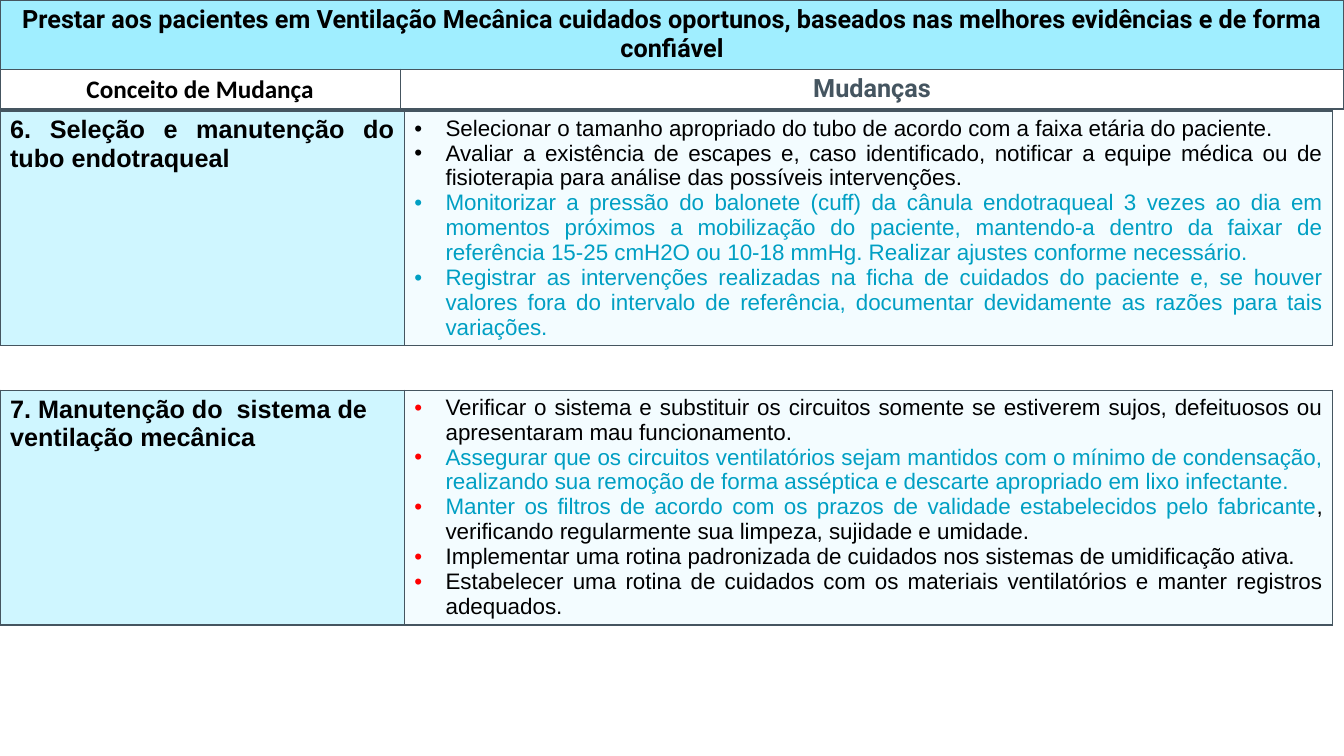
"""Build the slide of change concepts for patients on mechanical ventilation."""
from lxml import etree
from pptx import Presentation
from pptx.dml.color import RGBColor
from pptx.enum.text import MSO_ANCHOR, PP_ALIGN
from pptx.oxml.ns import qn
from pptx.util import Inches, Pt

CENTER, JUSTIFY, LEFT = PP_ALIGN.CENTER, PP_ALIGN.JUSTIFY, PP_ALIGN.LEFT
MIDDLE, TOP = MSO_ANCHOR.MIDDLE, MSO_ANCHOR.TOP
BLACK, SLATE, TEAL, RED = "000000", "455560", "009FC3", "FF0000"
WHITE, TITLE_FILL, CONCEPT_FILL, CHANGE_FILL = "FFFFFF", "A0EEFF", "CFF6FF", "F3FCFF"
LINE_CHARACTERS = 90
INDENT = Inches(0.31)

deck = Presentation()
deck.slide_width, deck.slide_height = Inches(13.33), Inches(7.5)
page = deck.slides.add_slide(deck.slide_layouts[6])


def add_grid(top, columns, rows):
    """Add a plain table; top, columns and rows are percentages of the slide."""
    widths = [round(deck.slide_width * share / 100) for share in columns]
    heights = [round(deck.slide_height * share / 100) for share in rows]
    table = page.shapes.add_table(len(rows), len(columns), 0, round(deck.slide_height * top / 100),
                                  sum(widths), sum(heights)).table
    table.first_row = table.horz_banding = False
    for column, width in zip(table.columns, widths):
        column.width = width
    for row, height in zip(table.rows, heights):
        row.height = height
    for cell in table.iter_cells():
        properties = cell._tc.get_or_add_tcPr()
        for side in ("a:lnL", "a:lnR", "a:lnT", "a:lnB"):
            border = etree.SubElement(properties, qn(side), w=str(Pt(1)))
            fill = etree.SubElement(border, qn("a:solidFill"))
            etree.SubElement(fill, qn("a:srgbClr"), val=SLATE)
    return table


def style(cell, fill, font_name, size, bold, align, anchor, color):
    """Fill a cell and format all its text."""
    cell.fill.solid()
    cell.fill.fore_color.rgb = RGBColor.from_string(fill)
    cell.vertical_anchor = anchor
    for para in cell.text_frame.paragraphs:
        para.alignment = align
        for span in para.runs:
            span.font.name, span.font.size, span.font.bold = font_name, Pt(size), bold
            span.font.color.rgb = RGBColor.from_string(color)


header = add_grid(0, (29.78, 70.22), (9.07, 5.2))
title, concept_heading, change_heading = header.cell(0, 0), header.cell(1, 0), header.cell(1, 1)
title.merge(header.cell(0, 1))
title.text_frame.text = ("Prestar aos pacientes em Ventilação Mecânica cuidados oportunos, "
                         "baseados nas melhores evidências e de forma confiável")
concept_heading.text_frame.text = "Conceito de Mudança"
change_heading.text_frame.text = "Mudanças"
style(title, TITLE_FILL, "Roboto", 18, True, CENTER, TOP, BLACK)
style(concept_heading, WHITE, "Calibri", 18, True, CENTER, MIDDLE, BLACK)
style(change_heading, WHITE, "Roboto", 18, True, CENTER, MIDDLE, SLATE)
concept_heading.margin_left = concept_heading.margin_right = concept_heading.margin_top = Inches(0.01)
concept_heading.margin_bottom = 0

sections = [
    (14.67, "6. Seleção e manutenção do tubo endotraqueal", JUSTIFY, None, [
        [("Selecionar o tamanho apropriado do tubo de acordo com a faixa etária do paciente.", BLACK)],
        [("Avaliar a existência de escapes e, caso identificado, notificar a equipe médica ou de "
          "fisioterapia para análise das possíveis intervenções.", BLACK)],
        [("Monitorizar a pressão do balonete (cuff) da cânula endotraqueal 3 vezes ao dia em "
          "momentos próximos a mobilização do paciente, mantendo-a dentro da faixar de referência "
          "15-25 cmH2O ou 10-18 mmHg. Realizar ajustes conforme necessário.", TEAL)],
        [("Registrar as intervenções realizadas na ficha de cuidados do paciente e, se houver "
          "valores fora do intervalo de referência, documentar devidamente as razões para tais "
          "variações.", TEAL)],
    ]),
    (51.6, "7. Manutenção do  sistema de ventilação mecânica", LEFT, RED, [
        [("Verificar o sistema e substituir os circuitos somente se estiverem sujos, defeituosos "
          "ou apresentaram mau funcionamento.", BLACK)],
        [("Assegurar que os circuitos ventilatórios sejam mantidos com o mínimo de condensação, "
          "realizando sua remoção de forma asséptica e descarte apropriado em lixo infectante.", TEAL)],
        [("Manter os filtros de acordo com os prazos de validade estabelecidos pelo fabricante", TEAL),
         (", verificando regularmente sua limpeza, sujidade e umidade.", BLACK)],
        [("Implementar uma rotina padronizada de cuidados nos sistemas de umidificação ativa.", BLACK)],
        [("Estabelecer uma rotina de cuidados com os materiais ventilatórios e manter "
          "registros adequados.", BLACK)],
    ]),
]

for top, concept, concept_align, bullet_color, changes in sections:
    body = add_grid(top, (30.08, 69.09), (31.07,))
    concept_cell, change_cell = body.cell(0, 0), body.cell(0, 1)
    concept_cell.text_frame.text = concept
    style(concept_cell, CONCEPT_FILL, "Arial", 18, True, concept_align, TOP, BLACK)

    change_cell.text_frame.text = "\n".join("".join(text for text, _ in change) for change in changes)
    style(change_cell, CHANGE_FILL, "Arial", 16, False, JUSTIFY, TOP, BLACK)
    for para, change in zip(change_cell.text_frame.paragraphs, changes):
        if len(para.text) < LINE_CHARACTERS:
            para.alignment = LEFT
        properties = para._p.get_or_add_pPr()
        properties.set("marL", str(INDENT))
        properties.set("indent", str(-INDENT))
        if bullet_color:
            tint = etree.SubElement(properties, qn("a:buClr"))
            etree.SubElement(tint, qn("a:srgbClr"), val=bullet_color)
        etree.SubElement(properties, qn("a:buFont"), typeface="Arial")
        etree.SubElement(properties, qn("a:buChar"), char="•")
        para.runs[0].text = change[0][0]
        para.runs[0].font.color.rgb = RGBColor.from_string(change[0][1])
        for text, color in change[1:]:
            span = para.add_run()
            span.text = text
            span.font.name, span.font.size, span.font.bold = "Arial", Pt(16), False
            span.font.color.rgb = RGBColor.from_string(color)

deck.save("out.pptx")
